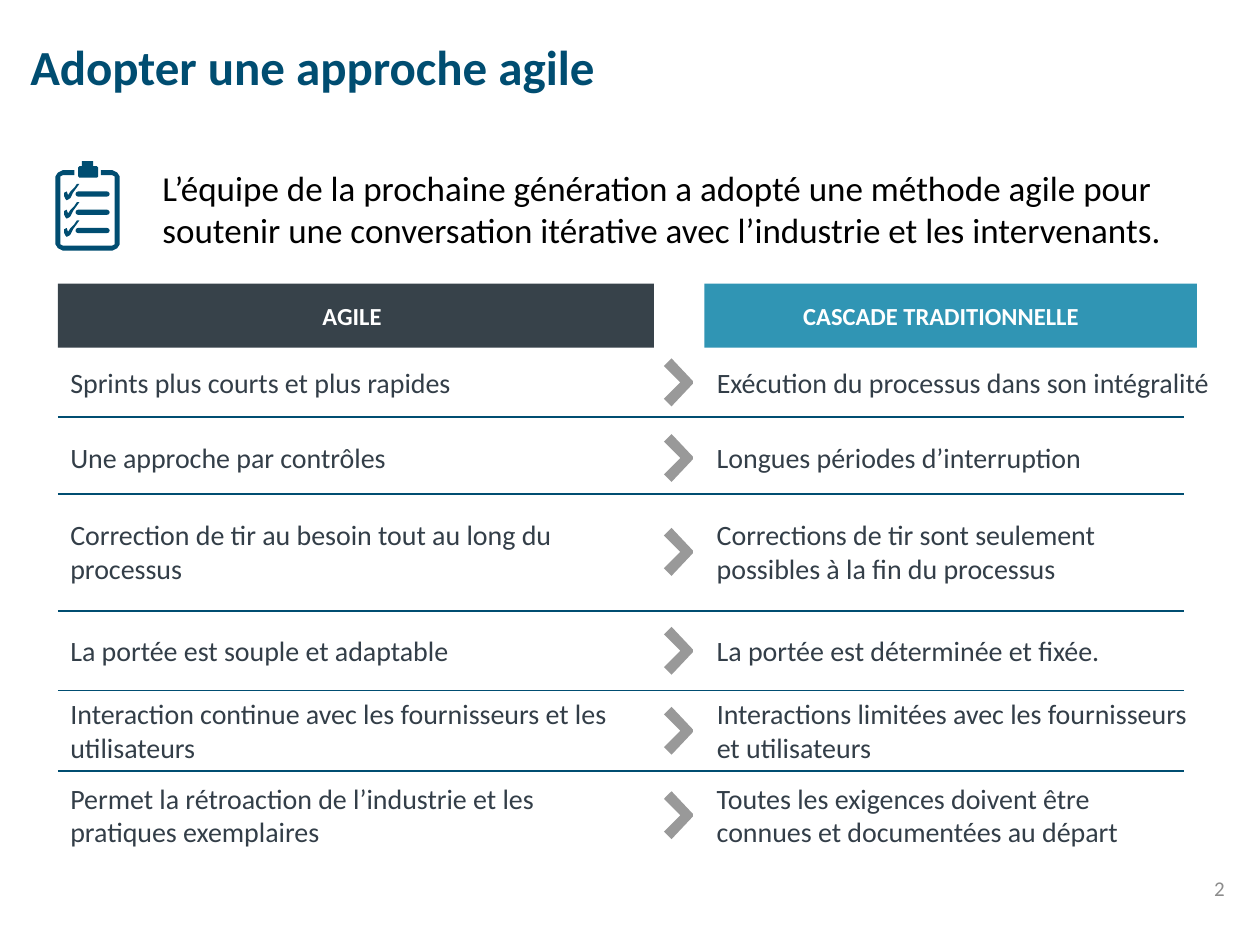
from pptx import Presentation
from pptx import util as u
from pptx.dml.color import RGBColor
from pptx.enum import shapes as s, text as t
from pptx.oxml.ns import qn
from lxml import etree

FONT = "Calibri"
NAVY, SLATE, TEAL, GREY, INK = "004D71", "37424A", "3095B4", "999999", "333E48"

# Content
TITLE = "Adopter une approche agile"
INTRO = ("L’équipe de la prochaine génération a adopté une méthode agile pour "
         "soutenir une conversation itérative avec l’industrie et les intervenants.")
PAGE = "2"

# Header: label, left, width, fill, right inset
HEADERS = [
    ("AGILE", 0.46, 4.73, SLATE, 0.16),
    ("CASCADE TRADITIONNELLE", 5.59, 3.91, TEAL, 0.25),
]

# Row: text top, lines of text, agile, traditional, width of traditional
ROWS = [
    (2.85, 1, "Sprints plus courts et plus rapides",
     "Exécution du processus dans son intégralité", 4.41),
    (3.45, 1, "Une approche par contrôles",
     "Longues périodes d’interruption", 3.9),
    (4.06, 2, "Correction de tir au besoin tout au long du processus",
     "Corrections de tir sont seulement possibles à la fin du processus", 3.9),
    (4.98, 1, "La portée est souple et adaptable",
     "La portée est déterminée et fixée.", 3.9),
    (5.48, 2, "Interaction continue avec les fournisseurs et les utilisateurs",
     "Interactions limitées avec les fournisseurs\vet utilisateurs", 4.41),
    (6.15, 2, "Permet la rétroaction de l’industrie et les pratiques exemplaires",
     "Toutes les exigences doivent être\vconnues et documentées au départ", 3.9),
]
RULES = [3.31, 3.92, 4.85, 5.48, 6.12]
ROW_HEIGHT = {1: 0.37, 2: 0.64}
LEFT, RIGHT, RULE_END = 0.46, 5.59, 9.4
AGILE_WIDTH = 4.72

# Outlines, in inches from their own top left corner
CHEVRON_LEFT, CHEVRON_HEIGHT = 5.27, 0.38
CHEVRON = [(0.07, 0.37), (0.06, 0.38), (0.05, 0.37), (0.01, 0.33), (0, 0.32),
           (0.01, 0.31), (0.13, 0.19), (0.01, 0.07), (0, 0.06), (0.01, 0.05),
           (0.05, 0.01), (0.06, 0), (0.07, 0.01), (0.23, 0.18), (0.23, 0.2)]
BOARD = [(0.36, 0), (0.45, 0), (0.49, 0.02), (0.51, 0.05), (0.51, 0.59),
         (0.49, 0.62), (0.45, 0.64), (0.06, 0.64), (0.02, 0.62), (0, 0.59),
         (0, 0.05), (0.02, 0.02), (0.06, 0), (0.15, 0), (0.15, 0.04),
         (0.06, 0.04), (0.04, 0.05), (0.04, 0.59), (0.06, 0.6), (0.45, 0.6),
         (0.47, 0.59), (0.47, 0.05), (0.45, 0.04), (0.36, 0.04)]
CLIP = [(0, 0.05), (0.01, 0.04), (0.03, 0.04), (0.03, 0), (0.12, 0), (0.12, 0.04),
        (0.15, 0.04), (0.16, 0.05), (0.16, 0.12), (0.15, 0.13), (0.01, 0.13), (0, 0.12)]
CHECK = [(0.12, 0), (0.07, 0.07), (0.05, 0.11), (0.04, 0.12), (0.02, 0.13),
         (0.01, 0.12), (0, 0.1), (0, 0.07), (0.02, 0.06), (0.03, 0.09),
         (0.05, 0.06), (0.08, 0.03), (0.1, 0)]
CHECK_TOP, CHECK_STEP, CHECKS = 1.46, 0.145, 3

presentation = Presentation()
presentation.slide_width, presentation.slide_height = u.Inches(10), u.Inches(7.5)
slide = presentation.slides.add_slide(presentation.slide_layouts[5])


def color(value):
    return RGBColor.from_string(value)


def paint(shape, fill):
    shape.shadow.inherit = False
    shape.fill.solid()
    shape.fill.fore_color.rgb = color(fill)
    shape.line.fill.background()


def write(shape, words, size, ink, bold=False, align=t.PP_ALIGN.LEFT,
          anchor=t.MSO_ANCHOR.TOP):
    frame = shape.text_frame
    frame.word_wrap = True
    frame.auto_size = t.MSO_AUTO_SIZE.NONE
    frame.vertical_anchor = anchor
    frame.text = words
    paragraph = frame.paragraphs[0]
    paragraph.alignment = align
    font = paragraph.font
    font.name, font.size, font.bold = FONT, u.Pt(size), bold
    font.color.rgb = color(ink)
    return frame


def add_text(left, top, width, height, *args, **options):
    box = slide.shapes.add_textbox(*map(u.Inches, (left, top, width, height)))
    write(box, *args, **options)


def add_block(preset, left, top, width, height, fill):
    shape = slide.shapes.add_shape(preset, *map(u.Inches, (left, top, width, height)))
    paint(shape, fill)
    return shape


def add_outline(points, left, top, fill):
    corners = [(u.Inches(left + x), u.Inches(top + y)) for x, y in points]
    builder = slide.shapes.build_freeform(*corners[0])
    builder.add_line_segments(corners[1:], close=True)
    paint(builder.convert_to_shape(), fill)


# Title, introduction and page number
title = slide.shapes.title
title.left, title.top, title.width, title.height = map(u.Inches, (0.24, 0.29, 5.94, 0.53))
frame = write(title, TITLE, 28, NAVY, bold=True)
frame.margin_left = frame.margin_right = frame.margin_top = frame.margin_bottom = 0
add_text(1.19, 1.27, 8.65, 0.77, INTRO, 20, "000000")
add_text(7.49, 6.85, 2.33, 0.4, PAGE, 12, "8C8C8C",
         align=t.PP_ALIGN.RIGHT, anchor=t.MSO_ANCHOR.MIDDLE)

# Column headers
for label, left, width, fill, inset in HEADERS:
    header = add_block(s.MSO_SHAPE.RECTANGLE, left, 2.25, width, 0.51, fill)
    frame = write(header, label, 14, "FFFFFF", bold=True,
                  align=t.PP_ALIGN.CENTER, anchor=t.MSO_ANCHOR.MIDDLE)
    frame.margin_right = u.Inches(inset)

# Comparison rows, each with a chevron centred on its text
for top, lines, agile, traditional, width in ROWS:
    height = ROW_HEIGHT[lines]
    add_text(LEFT, top, AGILE_WIDTH, height, agile, 16, INK)
    add_text(RIGHT, top, width, height, traditional, 16, INK)
    add_outline(CHEVRON, CHEVRON_LEFT, top + (height - CHEVRON_HEIGHT) / 2, GREY)

# Rules between rows
for y in RULES:
    rule = slide.shapes.add_connector(
        s.MSO_CONNECTOR.STRAIGHT, *map(u.Inches, (LEFT, y, RULE_END, y)))
    rule.line.color.rgb = color(NAVY)
    rule.line.width = u.Pt(0.75)
    etree.SubElement(rule._element.spPr, qn("a:effectLst"))

# Clipboard icon
add_outline(BOARD, 0.44, 1.35, NAVY)
add_outline(CLIP, 0.62, 1.28, NAVY)
for index in range(CHECKS):
    top = CHECK_TOP + index * CHECK_STEP
    bar = add_block(s.MSO_SHAPE.ROUNDED_RECTANGLE, 0.6, top + 0.06, 0.27, 0.04, NAVY)
    bar.adjustments[0] = 0.5
    add_outline(CHECK, 0.51, top, NAVY)

presentation.save("out.pptx")
